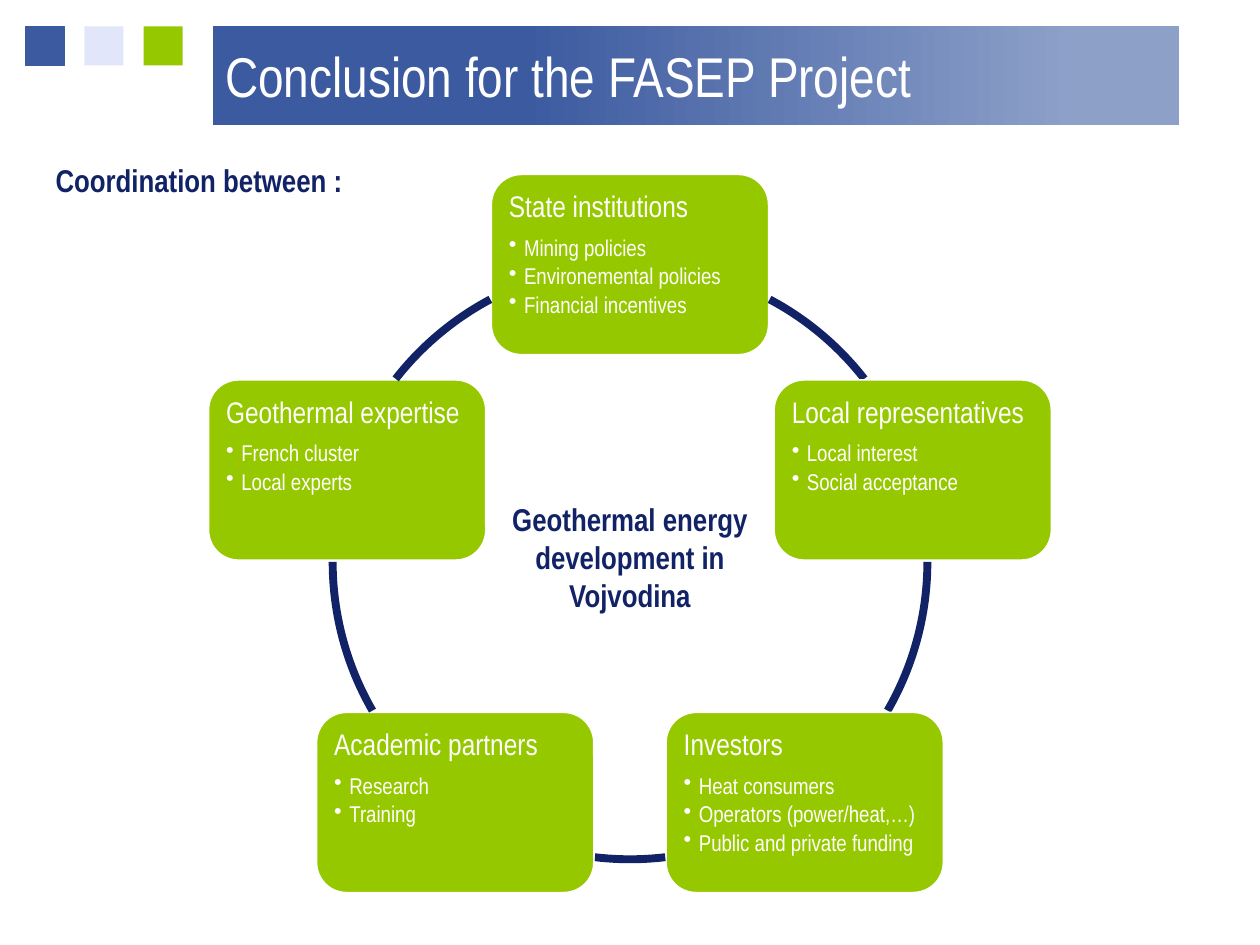
from math import cos, radians, sin

from lxml.etree import SubElement
from pptx import Presentation
from pptx.dml.color import RGBColor
from pptx.enum.shapes import MSO_SHAPE as Shape
from pptx.enum.text import MSO_ANCHOR as Anchor, PP_ALIGN as Align
from pptx.oxml.ns import qn
from pptx.util import Inches, Pt

BLUE = RGBColor(0x3C, 0x5A, 0xA0)
PALE_BLUE = RGBColor(0x8C, 0xA0, 0xC8)
LAVENDER = RGBColor(0xE1, 0xE6, 0xFA)
GREEN = RGBColor(0x96, 0xC8, 0x00)
NAVY = RGBColor(0x11, 0x22, 0x66)
WHITE = RGBColor(0xFF, 0xFF, 0xFF)
FONT = "Arial Narrow"

# Circle on which the five partners sit
CENTER_X, CENTER_Y, RADIUS = 5, 4.46, 2.36
CARD_WIDTH, CARD_HEIGHT = 2.2, 1.43

PARTNERS = [
    ("State institutions",
     ["Mining policies", "Environemental policies", "Financial incentives"]),
    ("Local representatives", ["Local interest", "Social acceptance"]),
    ("Investors",
     ["Heat consumers", "Operators (power/heat,…)", "Public and private funding"]),
    ("Academic partners", ["Research", "Training"]),
    ("Geothermal expertise", ["French cluster", "Local experts"]),
]
# Visible arcs between neighbours, in degrees clockwise from the right
ARCS = [(298, 322), (0, 30), (83.2, 96.8), (150, 180), (218, 242)]


def add_block(page, kind, left, top, width, height, fill=None, line=None, weight=0.75):
    block = page.shapes.add_shape(
        kind, Inches(left), Inches(top), Inches(width), Inches(height))
    block.shadow.inherit = False
    if fill is None:
        block.fill.background()
    else:
        block.fill.solid()
        block.fill.fore_color.rgb = fill
    if line is None:
        block.line.fill.background()
    else:
        block.line.color.rgb = line
        block.line.width = Pt(weight)
    return block


def write(para, text, size, color=WHITE, bold=False, align=Align.LEFT,
          spacing=None, after=None, bullet=False):
    if bullet:
        para.level = 1
        props = para._p.get_or_add_pPr()
        props.set("marL", str(Inches(0.12)))
        props.set("indent", str(-Inches(0.12)))
        SubElement(props, qn("a:buChar")).set("char", "•")
    para.alignment = align
    if spacing is not None:
        para.line_spacing = spacing
    if after is not None:
        para.space_after = Pt(after)
    span = para.add_run()
    span.text = text
    span.font.name = FONT
    span.font.size = Pt(size)
    span.font.bold = bold
    span.font.color.rgb = color


def add_label(page, text, left, top, width, height):
    box = page.shapes.add_textbox(
        Inches(left), Inches(top), Inches(width), Inches(height))
    box.text_frame.word_wrap = True
    write(box.text_frame.paragraphs[0], text, 18, color=NAVY, bold=True,
          align=Align.CENTER)


def add_title(page, text):
    banner = add_block(page, Shape.RECTANGLE, 1.69, 0.21, 7.67, 0.78, fill=BLUE)
    banner.fill.gradient()
    banner.fill.gradient_angle = 0
    stops = [(0.32, BLUE), (0.89, PALE_BLUE)]
    for stop, (position, color) in zip(banner.fill.gradient_stops, stops):
        stop.position = position
        stop.color.rgb = color
    frame = banner.text_frame
    frame.word_wrap = True
    frame.vertical_anchor = Anchor.MIDDLE
    write(frame.paragraphs[0], text, 32)


def add_card(page, angle, heading, points):
    left = CENTER_X + RADIUS * cos(radians(angle)) - CARD_WIDTH / 2
    top = CENTER_Y + RADIUS * sin(radians(angle)) - CARD_HEIGHT / 2
    card = add_block(page, Shape.ROUNDED_RECTANGLE, left, top, CARD_WIDTH,
                     CARD_HEIGHT, fill=GREEN, line=WHITE, weight=0.85)
    frame = card.text_frame
    frame.word_wrap = True
    frame.vertical_anchor = Anchor.TOP
    frame.margin_left = frame.margin_right = Inches(0.07)
    frame.margin_top = frame.margin_bottom = Inches(0.07)
    write(frame.paragraphs[0], heading, 17, spacing=0.9, after=7)
    for point in points:
        write(frame.add_paragraph(), point, 13, spacing=0.9, after=2.3, bullet=True)


def add_arc(page, start, end):
    arc = add_block(page, Shape.ARC, CENTER_X - RADIUS, CENTER_Y - RADIUS,
                    2 * RADIUS, 2 * RADIUS, line=NAVY, weight=4.5)
    # Angles are stored in 60000ths of a degree, adjustments in 100000ths
    arc.adjustments[0] = start * 0.6
    arc.adjustments[1] = end * 0.6


def main():
    deck = Presentation()
    deck.slide_width, deck.slide_height = Inches(10), Inches(7.5)
    page = deck.slides.add_slide(deck.slide_layouts[6])

    # Header: three squares and the title banner
    for index, (fill, line) in enumerate(
            [(BLUE, BLUE), (LAVENDER, None), (GREEN, None)]):
        add_block(page, Shape.RECTANGLE, 0.2 + 0.47 * index, 0.21, 0.31, 0.31,
                  fill=fill, line=line)
    add_title(page, "Conclusion for the FASEP Project")

    # Cycle of partners
    for index, ((heading, points), (start, end)) in enumerate(zip(PARTNERS, ARCS)):
        add_card(page, -90 + 72 * index, heading, points)
        add_arc(page, start, end)

    # Labels
    add_label(page, "Geothermal energy development in Vojvodina",
              3.82, 3.92, 2.36, 1.01)
    add_label(page, "Coordination between :", 0.05, 1.23, 3.06, 0.4)

    deck.save("out.pptx")


if __name__ == "__main__":
    main()
